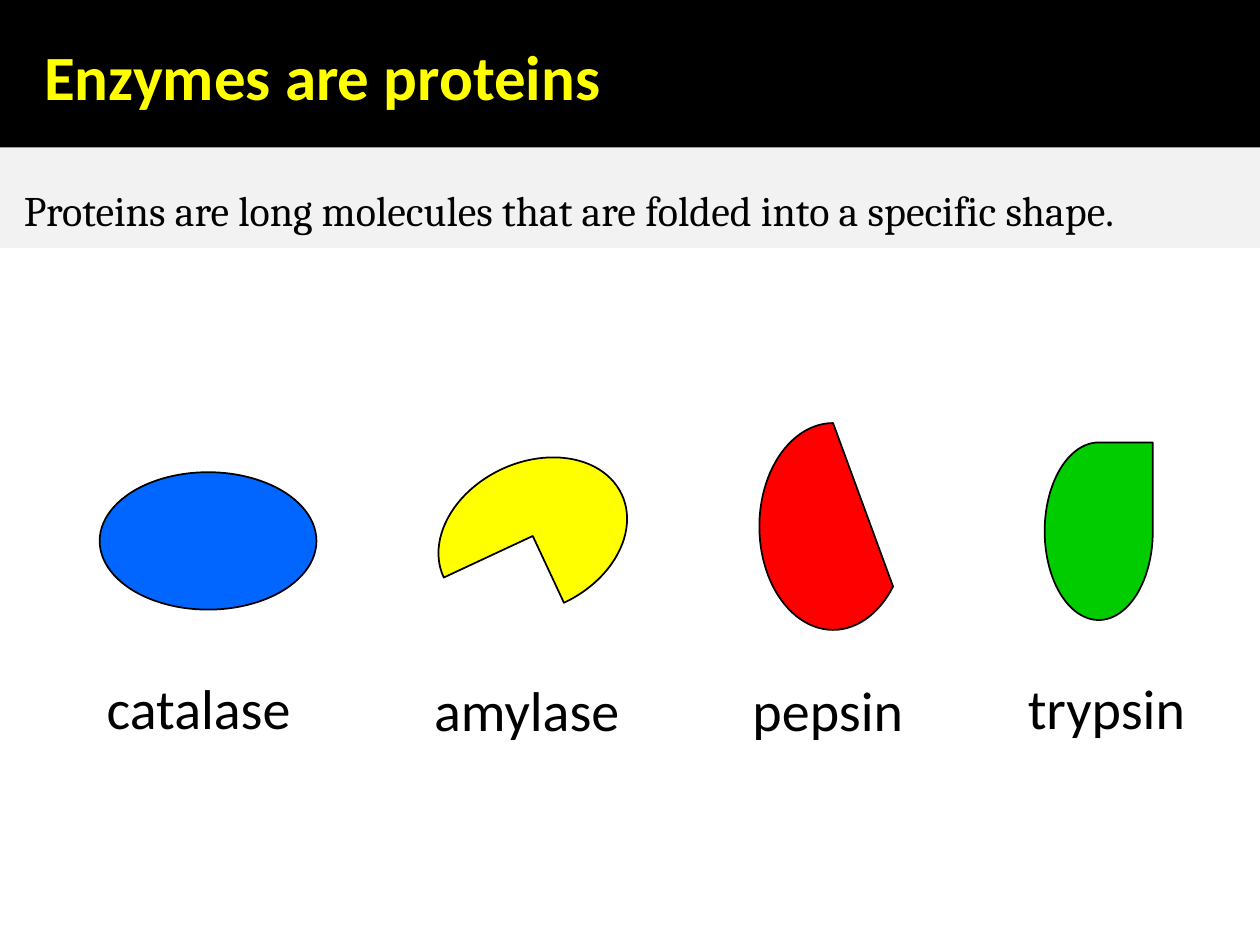
import pptx
import pptx.util
import pptx.dml.color
import pptx.enum.shapes
import pptx.enum.text

Cm = pptx.util.Cm
RGBColor = pptx.dml.color.RGBColor
MSO_SHAPE = pptx.enum.shapes.MSO_SHAPE

BLACK = RGBColor(0x00, 0x00, 0x00)
PALE = RGBColor(0xF2, 0xF2, 0xF2)
BLUE = RGBColor(0x00, 0x66, 0xFF)
YELLOW = RGBColor(0xFF, 0xFF, 0x00)
RED = RGBColor(0xFF, 0x00, 0x00)
GREEN = RGBColor(0x00, 0xCC, 0x00)

prs = pptx.Presentation()
prs.slide_width, prs.slide_height = Cm(25.4), Cm(19.05)
s = prs.slides.add_slide(prs.slide_layouts[6])


def add_shape(kind, box, fill, outlined=False):
    sp = s.shapes.add_shape(kind, *[Cm(v) for v in box])
    sp.shadow.inherit = False
    sp.fill.solid()
    sp.fill.fore_color.rgb = fill
    if outlined:
        sp.line.color.rgb = BLACK
        sp.line.width = pptx.util.Pt(1)
    else:
        sp.line.fill.background()
    return sp


def write(sp, text, size, color=BLACK, name="Calibri", bold=False):
    tf = sp.text_frame
    tf.word_wrap = True
    tf.vertical_anchor = pptx.enum.text.MSO_ANCHOR.TOP
    p = tf.paragraphs[0]
    p.alignment = pptx.enum.text.PP_ALIGN.LEFT
    r = p.add_run()
    r.text = text
    r.font.color.rgb = color
    fmt = {"size": pptx.util.Pt(size), "name": name, "bold": bold}
    for key, value in fmt.items():
        setattr(r.font, key, value)
    return p


# Title band and statement strip
add_shape(MSO_SHAPE.RECTANGLE, (0, 0, 25.4, 3.99), BLACK)
sp = add_shape(MSO_SHAPE.RECTANGLE, (0, 2.97, 25.4, 2.03), PALE)
p = write(sp, "Proteins are long molecules that are folded into a specific shape.",
          24, name="Cambria")
p.line_spacing = 1.5
pPr = p._p.get_or_add_pPr()
pPr.set("marL", str(Cm(1.22)))
pPr.set("indent", str(Cm(-0.89)))
margins = {"margin_left": 0.15, "margin_top": 0.25,
           "margin_right": 0.25, "margin_bottom": 0.13}
for key, value in margins.items():
    setattr(sp.text_frame, key, Cm(value))

# Title
sp = s.shapes.add_textbox(Cm(0.64), Cm(0.64), Cm(13.13), Cm(1.8))
write(sp, "Enzymes are proteins", 36, YELLOW, bold=True)

# Enzymes: shape, box, rotation, fill, name, label left, top and width
enzymes = [
    (MSO_SHAPE.OVAL, (2.01, 9.52, 4.37, 2.77), 0, BLUE, "catalase", 1.9, 13.46, 4.7),
    (MSO_SHAPE.PIE, (8.76, 9.32, 3.96, 2.97), 155, YELLOW, "amylase", 8.5, 13.5, 4.7),
    (MSO_SHAPE.CHORD, (15.31, 8.53, 2.97, 4.17), 0, RED, "pepsin", 14.92, 13.5, 3.84),
    (MSO_SHAPE.TEAR, (21.06, 8.92, 2.18, 3.58), 0, GREEN, "trypsin", 20.47, 13.46, 3.84),
]
for kind, box, rotation, fill, name, left, top, width in enzymes:
    sp = add_shape(kind, box, fill, outlined=True)
    sp.rotation = rotation
    label = s.shapes.add_textbox(Cm(left), Cm(top), Cm(width), Cm(1.6))
    write(label, name, 32)

prs.save("out.pptx")
